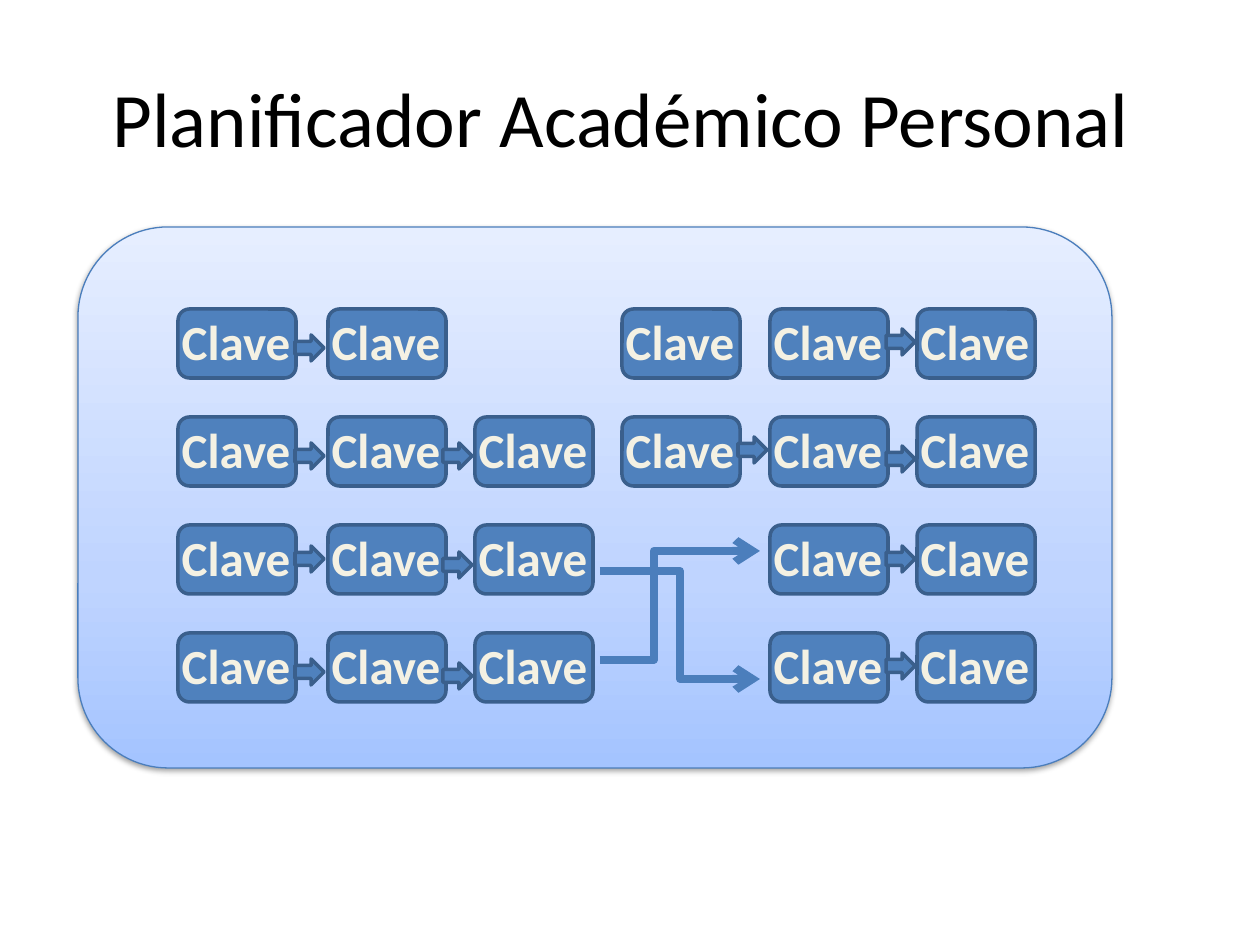
from copy import deepcopy

from lxml import etree
from pptx import Presentation
from pptx import util as u
from pptx.dml.color import RGBColor
from pptx.enum import shapes, text
from pptx.oxml import parse_xml
from pptx.oxml.ns import nsdecls, qn

PX = 914400 / 126


def px(*lengths):
    return [u.Emu(round(n * PX)) for n in lengths]


def paint(shape, fill, line, width):
    shape.shadow.inherit = False
    if fill:
        shape.fill.solid()
        shape.fill.fore_color.rgb = RGBColor.from_string(fill)
    shape.line.color.rgb = RGBColor.from_string(line)
    shape.line.width = u.Pt(width)


prs = Presentation()
prs.slide_width, prs.slide_height = px(1260, 945)
slide = prs.slides.add_slide(prs.slide_layouts[6])

# Panel with gradient and soft shadow
panel = slide.shapes.add_shape(
    shapes.MSO_SHAPE.ROUNDED_RECTANGLE, *px(78, 227, 1034, 541))
paint(panel, None, "4B7EBC", 0.75)
panel.fill.gradient()
panel.fill.gradient_angle = 90
first_stop = panel.fill._fill._gradFill.gsLst[0]
first_stop.addnext(deepcopy(first_stop))
stops = [(0, "A4C4FF"), (0.35, "BFD4FF"), (1, "E6EEFF")]
for stop, (position, color) in zip(panel.fill.gradient_stops, stops):
    stop.position = position
    stop.color.rgb = RGBColor.from_string(color)
panel._element.spPr.find(qn("a:effectLst")).append(parse_xml(
    f'<a:outerShdw {nsdecls("a")} blurRad="39370" dist="20320" dir="5400000"'
    ' rotWithShape="0"><a:srgbClr val="000000"><a:alpha val="38000"/>'
    '</a:srgbClr></a:outerShdw>'))

# Title
title = slide.shapes.add_textbox(*px(63, 38, 1134, 157)).text_frame
title.word_wrap = True
title.vertical_anchor = text.MSO_ANCHOR.MIDDLE
heading = title.paragraphs[0]
heading.text = "Planificador Académico Personal "
heading.alignment = text.PP_ALIGN.CENTER
heading.font.name = "Calibri"
heading.font.size = u.Pt(44)
heading.font.color.rgb = RGBColor.from_string("000000")

# Course tiles: the semesters (columns) filled in each row
columns = [178, 328, 475, 622, 770, 917]
row_top, row_step = 309, 108
filled = [(0, 1, 3, 4, 5), (0, 1, 2, 3, 4, 5), (0, 1, 2, 4, 5), (0, 1, 2, 4, 5)]
for row, semesters in enumerate(filled):
    top = row_top + row * row_step
    for semester in semesters:
        left = columns[semester]
        course = slide.shapes.add_group_shape().shapes
        tile = course.add_shape(
            shapes.MSO_SHAPE.ROUNDED_RECTANGLE, *px(left, top, 118, 69))
        paint(tile, "4F81BD", "3A5F8C", 2)
        label = course.add_textbox(*px(left - 10, top - 4, 136, 72)).text_frame
        label.word_wrap = False
        label.auto_size = text.MSO_AUTO_SIZE.SHAPE_TO_FIT_TEXT
        key = label.paragraphs[0]
        key.text = "Clave"
        key.alignment = text.PP_ALIGN.CENTER
        key.font.name = "Calibri"
        key.font.size = u.Pt(28)
        key.font.bold = True
        key.font.color.rgb = RGBColor.from_string("F4F1E3")

# Block arrows between neighbouring tiles: left edge, tops
prerequisites = [
    (295, (335, 443, 546, 659)),
    (443, (443, 552, 663)),
    (738, (437,)),
    (886, (329, 446, 546, 653)),
]
for left, tops in prerequisites:
    for top in tops:
        arrow = slide.shapes.add_shape(
            shapes.MSO_SHAPE.RIGHT_ARROW, *px(left, top, 29, 26))
        paint(arrow, "4F81BD", "3A5F8C", 2)

# Crossing elbow arrows between the two lower rows: start, end, bend
crossings = [(571, 679, 50000), (660, 551, 33600)]
for start, end, bend in crossings:
    link = slide.shapes.add_connector(
        shapes.MSO_CONNECTOR.ELBOW, *px(600, start, 760, end))
    link.line.color.rgb = RGBColor.from_string("4B7EBC")
    link.line.width = u.Pt(4.5)
    properties = link._element.spPr
    etree.SubElement(properties.find(qn("a:ln")), qn("a:tailEnd"), type="arrow")
    etree.SubElement(properties, qn("a:effectLst"))
    guides = properties.find(qn("a:prstGeom")).find(qn("a:avLst"))
    etree.SubElement(guides, qn("a:gd"), name="adj1", fmla=f"val {bend}")

prs.save("out.pptx")
